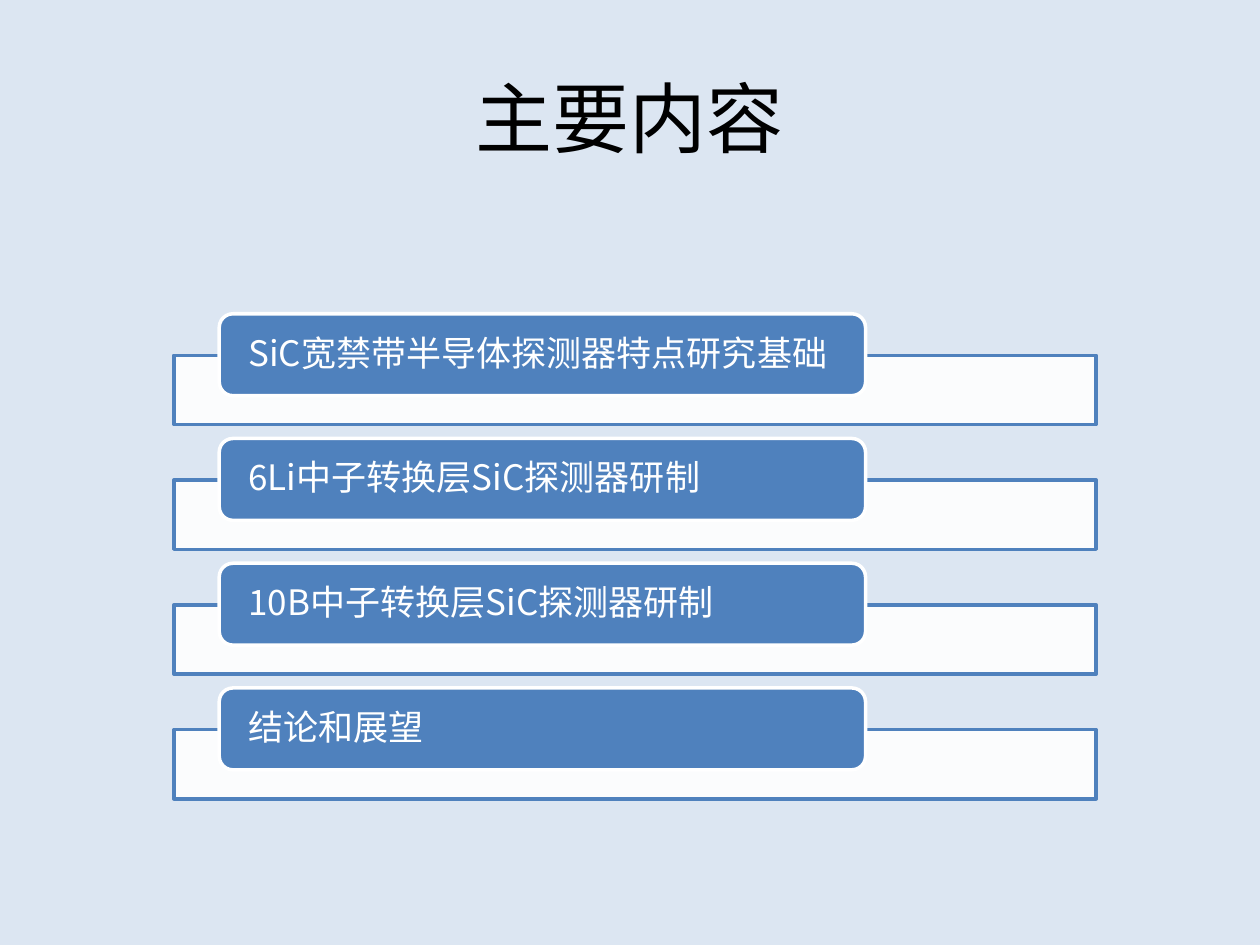
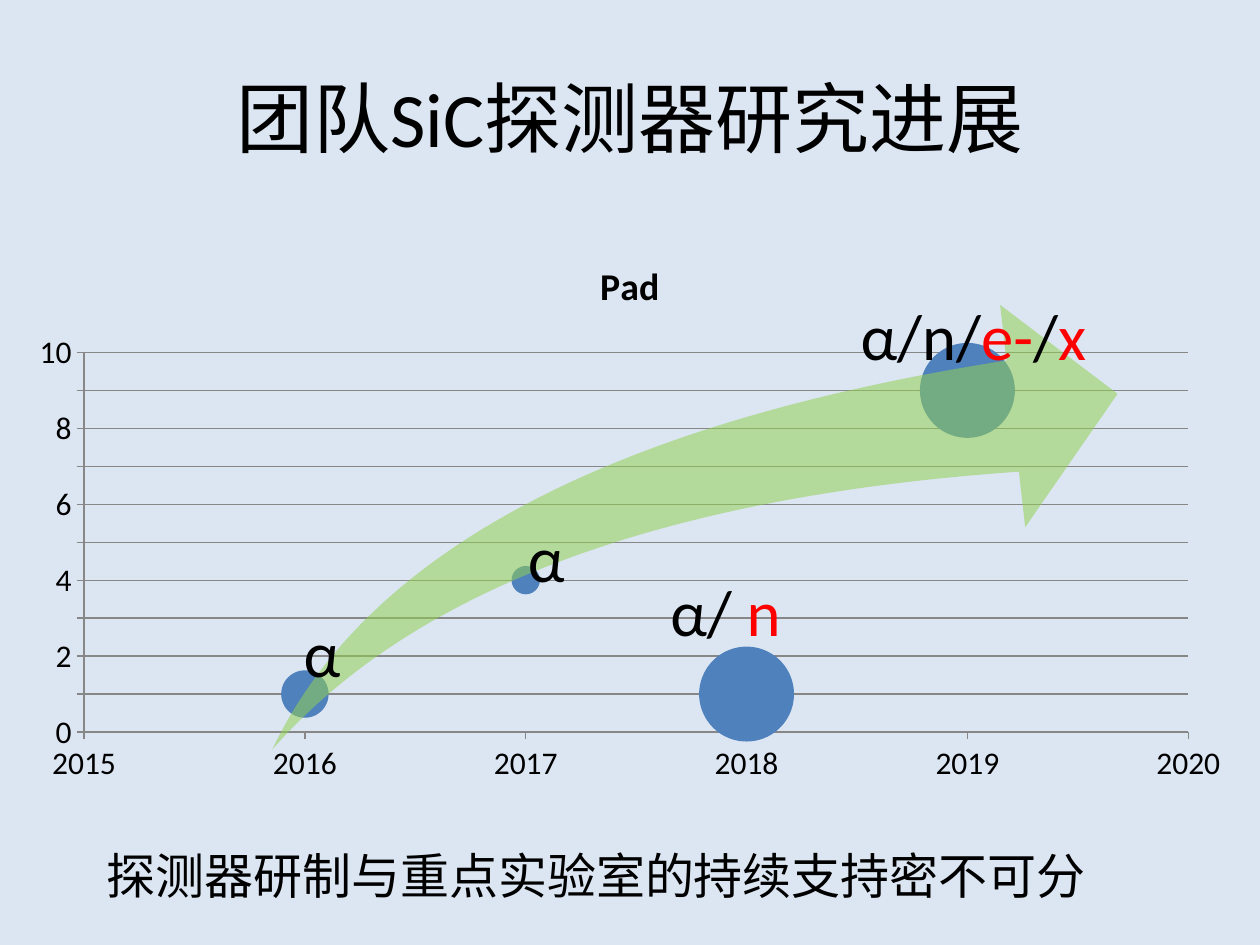
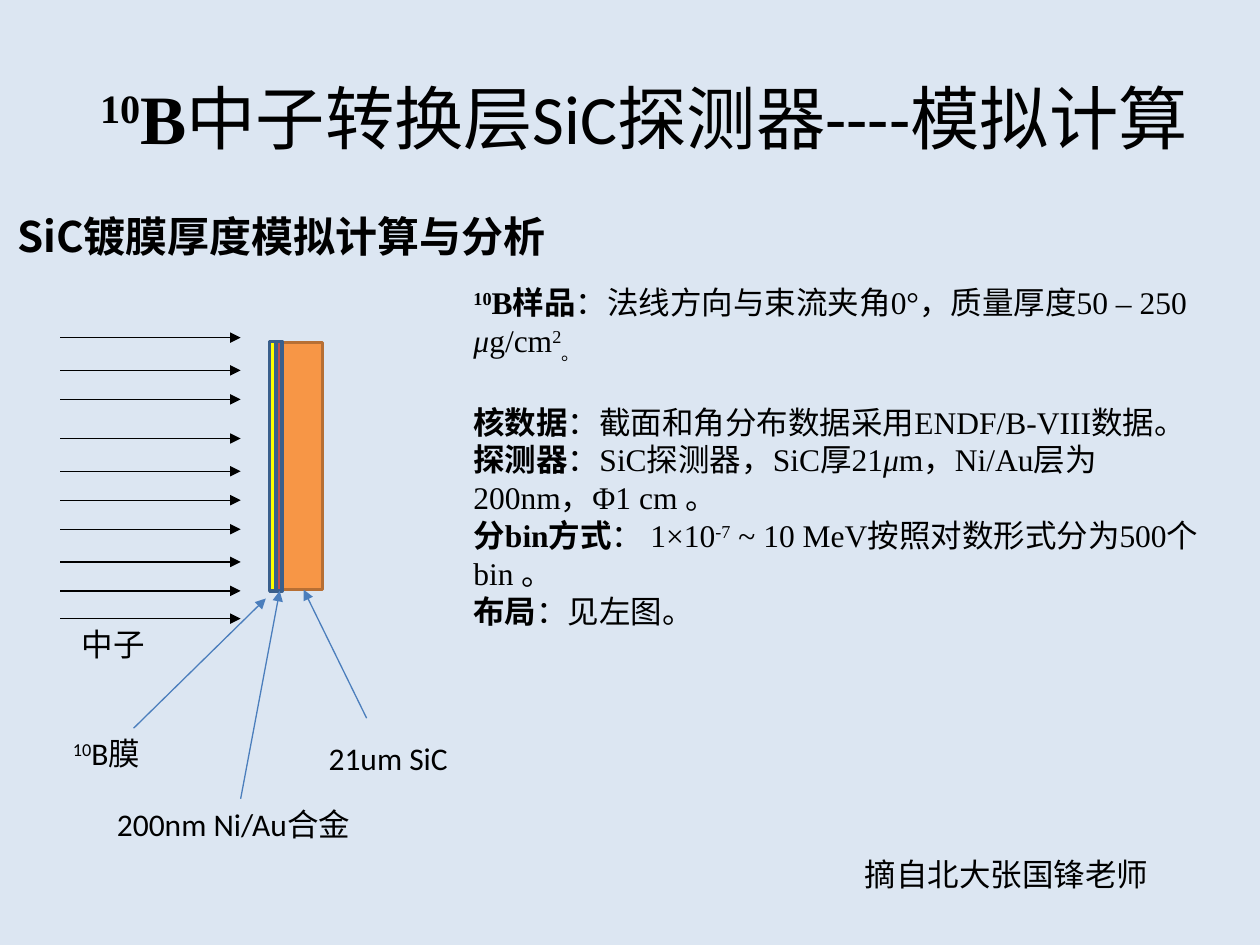
import pptx
import pptx.util
import pptx.chart.data
import pptx.dml.color
import pptx.enum.chart
import pptx.enum.shapes
import pptx.enum.text
import pptx.oxml
import pptx.oxml.ns
import lxml.etree

# ---- Shared look ----
SIZE = (10, 7.5)
BACK, BLACK, WHITE, RED, BLUE = "DCE6F2", "000000", "FFFFFF", "FF0000", "4F81BD"
LATIN, CJK, SERIF = "Calibri", "Noto Sans CJK SC", "Times New Roman"
TITLE_AT, TITLE_SIZE = (0.5, 0.3, 9, 1.25), 44
SHAPE = pptx.enum.shapes.MSO_SHAPE
CENTER = pptx.enum.text.PP_ALIGN.CENTER
MIDDLE = pptx.enum.text.MSO_ANCHOR.MIDDLE
BOLD, ITALIC = {"bold": True}, {"italic": True}
SUPER, SUB = {"baseline": 30000}, {"baseline": -25000}

# ---- Slide 1: contents ----
CONTENTS_TITLE = "主要内容"
CHAPTERS = [
    ("SiC宽禁带半导体探测器特点研究基础", CJK),
    ("6Li中子转换层SiC探测器研制", CJK),
    ("10B中子转换层SiC探测器研制", CJK),
    ("结论和展望", LATIN),
]
CHAPTER_PITCH = 0.99

# ---- Slide 2: progress ----
PROGRESS_TITLE = "团队SiC探测器研究进展"
PAD_POINTS = [(2016, 1, 0.25), (2017, 4, 0.09), (2018, 1, 1), (2019, 9, 1)]
PARTICLES = [  # place, left inset, runs
    ((2.32, 4.93, 1.21, 1.05), 0.09, ["α"]),
    ((4.04, 4.18, 0.68, 0.81), 0.15, ["α"]),
    ((5.12, 4.61, 2.03, 0.59), 0.2, ["α/ ", ("n", {"color": RED})]),
    ((6.56, 2.42, 2.25, 0.77), 0.27,
     ["α/n/", ("e-", {"color": RED}), "/", ("x", {"color": RED})]),
]
SUPPORT = "探测器研制与重点实验室的持续支持密不可分"

# ---- Slide 3: simulation ----
SIMULATION_TITLE = [("10", {"name": SERIF, **BOLD, **SUPER}), ("B", {"name": SERIF, **BOLD}),
                    "中子转换层SiC探测器----模拟计算"]
HEADING = "SiC镀膜厚度模拟计算与分析"
CONDITIONS = [
    [("10", {**BOLD, **SUPER}), ("B样品", BOLD), "：法线方向与束流夹角0°，质量厚度50 – 250 ",
     ("μ", ITALIC), "g/cm", ("2", SUPER), ("。", SUB)],
    [("核数据", BOLD), "：截面和角分布数据采用ENDF/B-VIII数据。"],
    [("探测器", BOLD), "：SiC探测器，SiC厚21", ("μ", ITALIC), "m，Ni/Au层为200nm，Φ1 cm 。"],
    [("分bin方式", BOLD), "： 1×10", ("-7", SUPER), " ~ 10 MeV按照对数形式分为500个bin 。"],
    [("布局", BOLD), "：见左图。"],
]
LAYERS = [  # place, fill, line
    ((2.24, 2.72, 0.32, 1.96), "F79646", "B76F34"),
    ((2.14, 2.71, 0.05, 1.98), "FFFF00", "3A5F8C"),
    ((2.19, 2.71, 0.05, 1.98), "C0504D", "3A5F8C"),
]
LAYER_LABELS = [
    ((0.48, 5.78, 0.77, 0.4), [("10", SUPER), "B膜"]),
    ((0.83, 6.34, 2.16, 0.4), ["200nm Ni/Au合金"]),
    ((2.51, 5.82, 1.23, 0.4), ["21um SiC"]),
    ((0.55, 4.91, 0.71, 0.4), ["中子"]),
]
POINTERS = [((1.06, 5.78), (2.11, 4.75)), ((1.91, 6.34), (2.22, 4.69)),
            ((2.91, 5.7), (2.41, 4.68))]
NEUTRON_X = (0.48, 1.91)
NEUTRON_YS = [start + step for start in (2.68, 3.48, 4.2) for step in (0, 0.26, 0.49)] + [4.91]
CREDIT = "摘自北大张国锋老师"


# ---- Helpers ----
def color(hex_text):
    return pptx.dml.color.RGBColor.from_string(hex_text)


def inches(values):
    return [pptx.util.Inches(v) for v in values]


def set_font(font, **values):
    values = {"name": LATIN, "size": 18, "color": BLACK, **values}
    font.color.rgb = color(values.pop("color"))
    values["size"] = pptx.util.Pt(values["size"])
    for key, value in values.items():
        setattr(font, key, value)


def write(frame, paragraphs, insets=(0.1, 0.05, 0.1, 0.05), anchor=None, layout=None, **base):
    """Fill a frame with paragraphs, each a list of strings or (string, format)."""
    sides = ("margin_left", "margin_top", "margin_right", "margin_bottom")
    for key, value in zip(sides, inches(insets)):
        setattr(frame, key, value)
    frame.word_wrap = True
    frame.vertical_anchor = anchor or pptx.enum.text.MSO_ANCHOR.TOP
    for i, runs in enumerate(paragraphs):
        paragraph = frame.add_paragraph() if i else frame.paragraphs[0]
        for key, value in (layout or {}).items():
            setattr(paragraph, key, value)
        for item in runs:
            words, extra = (item, {}) if isinstance(item, str) else item
            values = {**base, **extra}
            baseline = values.pop("baseline", None)
            run = paragraph.add_run()
            run.text = words
            set_font(run.font, **values)
            if baseline:
                run.font._element.set("baseline", str(baseline))


def add_text(slide, at, paragraphs, **options):
    frame = slide.shapes.add_textbox(*inches(at)).text_frame
    write(frame, paragraphs, **options)
    return frame


def add_box(slide, kind, at, fill, line=None, opacity=None):
    box = slide.shapes.add_shape(kind, *inches(at))
    box.shadow.inherit = False
    box.fill.solid()
    box.fill.fore_color.rgb = color(fill)
    if opacity:
        tint = box._element.spPr.find(".//" + pptx.oxml.ns.qn("a:srgbClr"))
        lxml.etree.SubElement(tint, pptx.oxml.ns.qn("a:alpha"), val=str(opacity * 1000))
    if line:
        box.line.color.rgb = color(line)
        box.line.width = pptx.util.Pt(2)
    else:
        box.line.fill.background()
    return box


def add_arrow(slide, start, end, line):
    straight = pptx.enum.shapes.MSO_CONNECTOR.STRAIGHT
    arrow = slide.shapes.add_connector(straight, *inches(start + end))
    arrow.line.color.rgb = color(line)
    arrow.line.width = pptx.util.Pt(0.75)
    qn = pptx.oxml.ns.qn
    lxml.etree.SubElement(arrow.line._get_or_add_ln(), qn("a:tailEnd"), type="triangle")
    lxml.etree.SubElement(arrow._element.spPr, qn("a:effectLst"))


def new_slide(deck, title, at=TITLE_AT, size=TITLE_SIZE):
    slide = deck.slides.add_slide(deck.slide_layouts[6])
    add_text(slide, at, [title], anchor=MIDDLE, layout={"alignment": CENTER}, size=size)
    return slide


# ---- Slides ----
def build_contents(deck):
    slide = new_slide(deck, [CONTENTS_TITLE])
    for row, (chapter, font) in enumerate(CHAPTERS):
        drop = row * CHAPTER_PITCH
        add_box(slide, SHAPE.RECTANGLE, (1.38, 2.82 + drop, 7.32, 0.55), WHITE, BLUE, 90)
        tab = add_box(slide, SHAPE.ROUNDED_RECTANGLE, (1.74, 2.49 + drop, 5.13, 0.65), BLUE, WHITE)
        write(tab.text_frame, [[chapter]], insets=(0.2, 0, 0.1, 0), anchor=MIDDLE,
              layout={"line_spacing": 0.9, "alignment": pptx.enum.text.PP_ALIGN.LEFT},
              name=font, size=20, color=WHITE)


def add_pad_chart(slide):
    pads = pptx.chart.data.BubbleChartData()
    series = pads.add_series("Pad")
    for point in PAD_POINTS:
        series.add_data_point(*point)
    chart = slide.shapes.add_chart(pptx.enum.chart.XL_CHART_TYPE.BUBBLE,
                                   *inches((0.12, 1.86, 9.76, 4.44)), pads).chart
    set_font(chart.font)
    chart.has_legend = False
    chart.has_title = True
    write(chart.chart_title.text_frame, [["Pad"]], size=21.6, bold=True)
    bubbles = chart.plots[0].series[0].format
    bubbles.fill.solid()
    bubbles.fill.fore_color.rgb = color(BLUE)
    bubbles.line.fill.background()
    for axis, low, high, grid in ((chart.category_axis, 2015, 2020, False),
                                  (chart.value_axis, 0, 10, True)):
        settings = {"minimum_scale": low, "maximum_scale": high, "major_unit": 1,
                    "has_major_gridlines": grid, "has_minor_gridlines": False,
                    "major_tick_mark": pptx.enum.chart.XL_TICK_MARK.OUTSIDE}
        for key, value in settings.items():
            setattr(axis, key, value)
        axis.tick_labels.number_format = "General"
        axis.tick_labels.number_format_is_linked = False
        lines = [axis.format.line] + ([axis.major_gridlines.format.line] if grid else [])
        for line in lines:
            line.color.rgb = color("878787")
            line.width = pptx.util.Pt(0.75)


def build_progress(deck):
    slide = new_slide(deck, [PROGRESS_TITLE])
    add_pad_chart(slide)
    swoosh = add_box(slide, SHAPE.SWOOSH_ARROW, (2.16, 2.42, 6.71, 3.53), "92D050", opacity=54)
    for i in range(2):
        swoosh.adjustments[i] = 0.25
    for at, inset, runs in PARTICLES:
        add_text(slide, at, [runs], insets=(inset, 0, 0, 0),
                 layout={"line_spacing": 0.9}, size=37)
    add_text(slide, (0.75, 6.66, 8.27, 0.57), [[SUPPORT]], name=CJK, size=28)


def build_simulation(deck):
    slide = new_slide(deck, SIMULATION_TITLE, (0.5, 0.3, 9.22, 1.25), 39.6)
    add_text(slide, (0.04, 1.62, 4.41, 0.5), [[HEADING]], name=CJK, size=24, bold=True)
    for at, fill, line in LAYERS:
        add_box(slide, SHAPE.RECTANGLE, at, fill, line)
    for start, end in POINTERS:
        add_arrow(slide, start, end, "4B7EBC")
    for y in NEUTRON_YS:
        add_arrow(slide, (NEUTRON_X[0], y), (NEUTRON_X[1], y), BLACK)
    for at, label in LAYER_LABELS:
        add_text(slide, at, [label])
    conditions = add_text(slide, (3.66, 2.2, 6.06, 2.73), CONDITIONS, name=SERIF)
    conditions.paragraphs[1].space_before = pptx.util.Pt(22)
    add_text(slide, (6.18, 6.74, 3.62, 0.4), [[CREDIT]],
             layout={"alignment": CENTER}, name=SERIF)


def main():
    deck = pptx.Presentation()
    deck.slide_width, deck.slide_height = inches(SIZE)
    backdrop = deck.slide_master.background.fill
    backdrop.solid()
    backdrop.fore_color.rgb = color(BACK)
    for build in (build_contents, build_progress, build_simulation):
        build(deck)
    deck.save("out.pptx")


if __name__ == "__main__":
    main()
